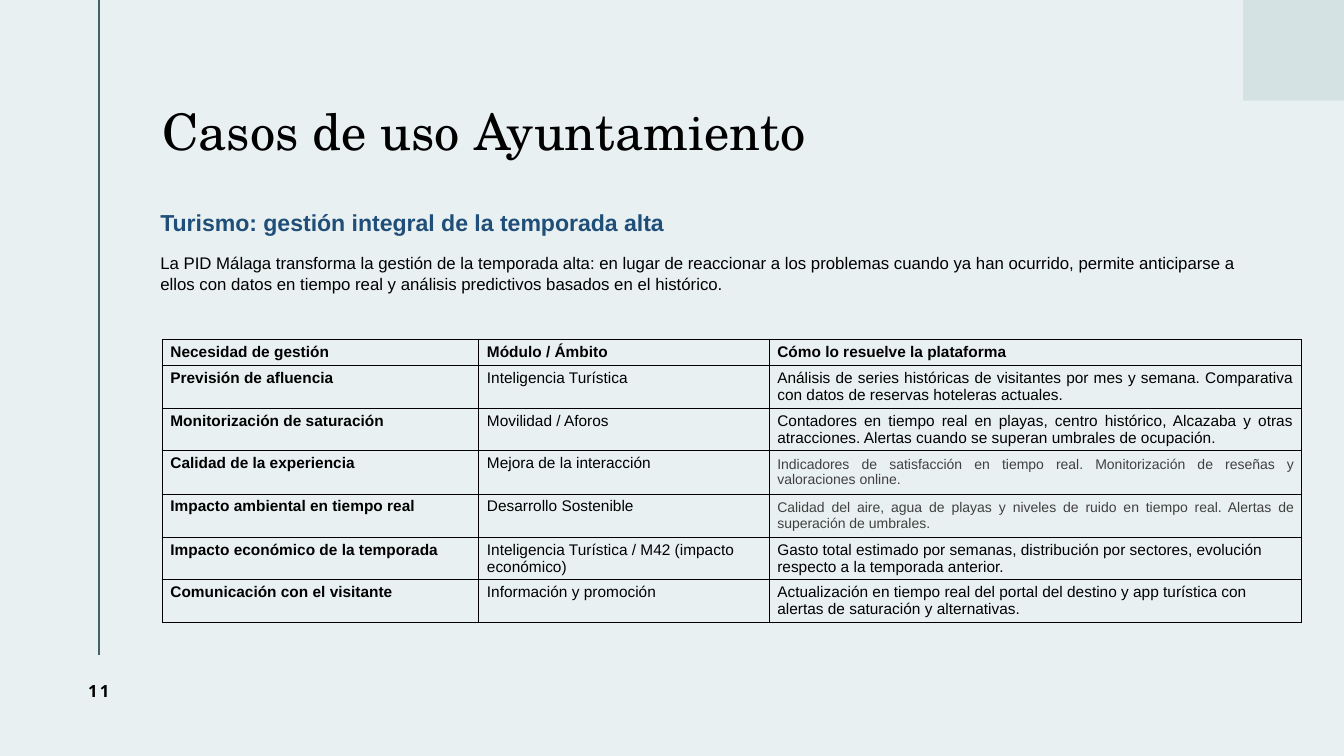
"""Build the slide on municipal use cases for high-season tourism."""
import pptx
import pptx.dml.color
import pptx.enum.shapes
import pptx.enum.text
import pptx.oxml
import pptx.oxml.ns
import pptx.util
from pptx.util import Inches

COLORS = {
    "background": "E9F0F1",
    "corner": "D4E2E4",
    "rule": "3F636A",
    "heading": "1F4E79",
    "text": "000000",
    "muted": "404040",
}
ALIGN = pptx.enum.text.PP_ALIGN
ANCHOR = pptx.enum.text.MSO_ANCHOR
COLUMN_WIDTHS = (3.14, 2.88, 5.28)
HEADER_HEIGHT = 0.26
ROW_HEIGHT = 0.42
HEADERS = ("Necesidad de gestión", "Módulo / Ámbito", "Cómo lo resuelve la plataforma")
USE_CASES = (
    ("Previsión de afluencia", "Inteligencia Turística",
     "Análisis de series históricas de visitantes por mes y semana. "
     "Comparativa con datos de reservas hoteleras actuales."),
    ("Monitorización de saturación", "Movilidad / Aforos",
     "Contadores en tiempo real en playas, centro histórico, Alcazaba y otras "
     "atracciones. Alertas cuando se superan umbrales de ocupación."),
    ("Calidad de la experiencia", "Mejora de la interacción",
     "Indicadores de satisfacción en tiempo real. "
     "Monitorización de reseñas y valoraciones online."),
    ("Impacto ambiental en tiempo real", "Desarrollo Sostenible",
     "Calidad del aire, agua de playas y niveles de ruido en tiempo real. "
     "Alertas de superación de umbrales."),
    ("Impacto económico de la temporada",
     "Inteligencia Turística / M42 (impacto económico)",
     "Gasto total estimado por semanas, distribución por sectores, "
     "evolución respecto a la temporada anterior."),
    ("Comunicación con el visitante", "Información y promoción",
     "Actualización en tiempo real del portal del destino y app turística "
     "con alertas de saturación y alternativas."),
)
MUTED_ROWS = (3, 4)
JUSTIFIED_ROWS = (1, 2, 3, 4)


def rgb(name):
    return pptx.dml.color.RGBColor.from_string(COLORS[name])


def add_run(paragraph, text, size, color="text", bold=False, font="Arial"):
    run = paragraph.add_run()
    run.text = text
    run.font.name = font
    run.font.size = pptx.util.Pt(size)
    run.font.bold = bold
    run.font.color.rgb = rgb(color)
    return run


def place(shape, left, top, width, height):
    shape.left, shape.top = Inches(left), Inches(top)
    shape.width, shape.height = Inches(width), Inches(height)


def set_frame(frame, anchor, margins):
    frame.word_wrap = True
    frame.auto_size = pptx.enum.text.MSO_AUTO_SIZE.NONE
    frame.vertical_anchor = anchor
    (frame.margin_left, frame.margin_top,
     frame.margin_right, frame.margin_bottom) = map(Inches, margins)


def add_decoration(slide):
    rule = slide.shapes.add_connector(
        pptx.enum.shapes.MSO_CONNECTOR.STRAIGHT,
        Inches(0.98), Inches(0), Inches(0.98), Inches(6.5))
    rule.line.color.rgb = rgb("rule")
    rule.line.width = pptx.util.Pt(1.5)
    properties = rule._element.spPr
    properties.append(pptx.oxml.parse_xml(
        f'<a:effectLst {pptx.oxml.ns.nsdecls("a")}/>'))
    corner = slide.shapes.add_shape(
        pptx.enum.shapes.MSO_SHAPE.RECTANGLE,
        Inches(12.33), Inches(0), Inches(1), Inches(1))
    corner.shadow.inherit = False
    corner.fill.solid()
    corner.fill.fore_color.rgb = rgb("corner")
    corner.line.fill.background()


def fill_title(title):
    place(title, 1.61, 0.55, 10.01, 1.56)
    set_frame(title.text_frame, ANCHOR.MIDDLE, (0, 0.05, 0.1, 0.05))
    paragraph = title.text_frame.paragraphs[0]
    paragraph.alignment = ALIGN.LEFT
    paragraph.line_spacing = 0.9
    add_run(paragraph, "Casos de uso Ayuntamiento", 36, font="TeX Gyre Schola")


def format_plain(paragraph, space_before):
    properties = paragraph._p.get_or_add_pPr()
    properties.set("marL", "0")
    properties.set("indent", "0")
    properties.append(pptx.oxml.parse_xml(
        f'<a:buNone {pptx.oxml.ns.nsdecls("a")}/>'))
    paragraph.space_before = pptx.util.Pt(space_before)


def fill_body(body):
    place(body, 1.59, 2.07, 11.02, 4.51)
    set_frame(body.text_frame, ANCHOR.TOP, (0, 0, 0, 0))
    heading = body.text_frame.paragraphs[0]
    format_plain(heading, 0)
    add_run(heading, "Turismo: gestión integral de la temporada alta",
            16.5, "heading", True)
    summary = body.text_frame.add_paragraph()
    format_plain(summary, 12)
    add_run(summary,
            "La PID Málaga transforma la gestión de la temporada alta: en lugar de "
            "reaccionar a los problemas cuando ya han ocurrido, permite anticiparse a "
            "ellos con datos en tiempo real y análisis predictivos basados en el "
            "histórico.", 12)


def add_slide_number(slide):
    box = slide.shapes.add_textbox(
        Inches(0.45), Inches(6.5), Inches(1.06), Inches(0.71))
    set_frame(box.text_frame, ANCHOR.MIDDLE, (0.1, 0.05, 0.1, 0.05))
    paragraph = box.text_frame.paragraphs[0]
    paragraph.alignment = ALIGN.CENTER
    run = add_run(paragraph, "11", 12, bold=True, font="Open Sans")
    run._r.get_or_add_rPr().set("spc", "150")


def add_borders(cell):
    properties = cell._tc.get_or_add_tcPr()
    for side in ("lnL", "lnR", "lnT", "lnB"):
        properties.append(pptx.oxml.parse_xml(
            f'<a:{side} {pptx.oxml.ns.nsdecls("a")} w="{pptx.util.Pt(0.75)}">'
            f'<a:solidFill><a:srgbClr val="{COLORS["text"]}"/></a:solidFill>'
            f'</a:{side}>'))


def fill_cell(cell, text, row, column):
    muted = column == 2 and row in MUTED_ROWS
    add_borders(cell)
    cell.fill.background()
    cell.margin_left = cell.margin_right = Inches(0.08)
    cell.margin_top = cell.margin_bottom = Inches(0.06 if muted else 0.04)
    paragraph = cell.text_frame.paragraphs[0]
    justified = column == 2 and row in JUSTIFIED_ROWS
    paragraph.alignment = ALIGN.JUSTIFY if justified else ALIGN.LEFT
    add_run(paragraph, text, 10 if muted else 11, "muted" if muted else "text",
            row == 0 or column == 0)


def add_use_case_table(slide):
    rows = (HEADERS,) + USE_CASES
    height = HEADER_HEIGHT + ROW_HEIGHT * len(USE_CASES)
    table = slide.shapes.add_table(
        len(rows), len(HEADERS), Inches(1.61), Inches(3.37),
        Inches(sum(COLUMN_WIDTHS)), Inches(height)).table
    table.first_row = table.horz_banding = False
    for column, width in zip(table.columns, COLUMN_WIDTHS):
        column.width = Inches(width)
    for row, texts in enumerate(rows):
        table.rows[row].height = Inches(ROW_HEIGHT if row else HEADER_HEIGHT)
        for column, text in enumerate(texts):
            fill_cell(table.cell(row, column), text, row, column)


def main():
    presentation = pptx.Presentation()
    presentation.slide_width = Inches(13.33)
    presentation.slide_height = Inches(7.5)
    slide = presentation.slides.add_slide(presentation.slide_layouts[1])
    slide.background.fill.solid()
    slide.background.fill.fore_color.rgb = rgb("background")
    add_decoration(slide)
    fill_title(slide.shapes.title)
    fill_body(slide.placeholders[1])
    add_slide_number(slide)
    add_use_case_table(slide)
    presentation.save("out.pptx")


if __name__ == "__main__":
    main()
